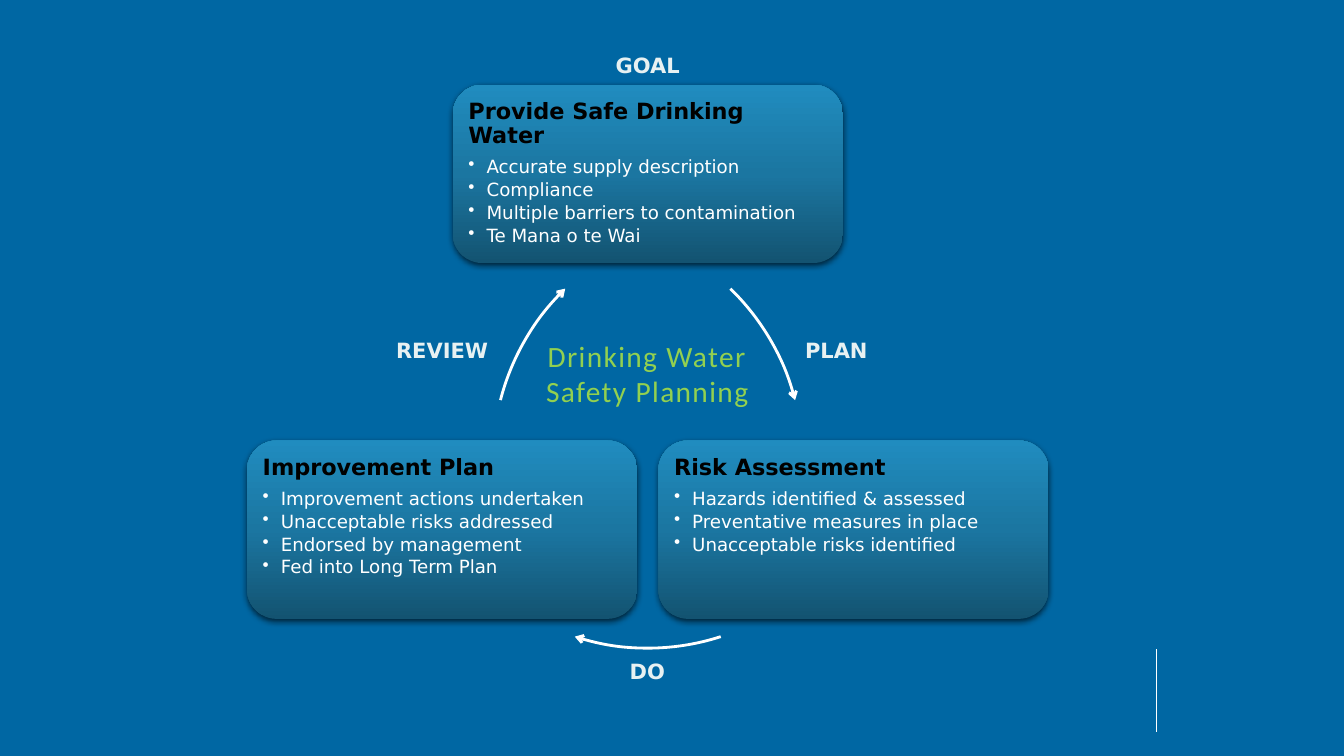
import copy

import lxml.etree
import pptx
import pptx.dml.color
import pptx.enum.shapes
import pptx.enum.text
import pptx.oxml.ns
import pptx.util

Inches = pptx.util.Inches
Pt = pptx.util.Pt
qn = pptx.oxml.ns.qn
ALIGN = pptx.enum.text.PP_ALIGN
ANCHOR = pptx.enum.text.MSO_ANCHOR
FIT = pptx.enum.text.MSO_AUTO_SIZE
SHAPE = pptx.enum.shapes.MSO_SHAPE

COLORS = {
    "background": "0067A3",
    "card_bottom": "135371",
    "card_middle": "1B76A1",
    "card_top": "208CBF",
    "shadow": "000000",
    "heading": "000000",
    "white": "FFFFFF",
    "label": "E7F1F2",
    "title": "92D050",
}


def rgb(name):
    return pptx.dml.color.RGBColor.from_string(COLORS[name])


def add_xml(parent, tag, **attributes):
    return lxml.etree.SubElement(parent, qn(tag), attributes)


class CycleSlide:
    font = "DejaVu Sans"
    card_size = (3.87, 1.77)
    circle = 4.71

    def __init__(self, deck):
        self.slide = deck.slides.add_slide(deck.slide_layouts[5])
        self.shapes = self.slide.shapes
        fill = self.slide.background.fill
        fill.solid()
        fill.fore_color.rgb = rgb("background")

    def run(self, paragraph, text, size, color, bold=False, font=None):
        run = paragraph.add_run()
        run.text = text
        run.font.name = font or self.font
        run.font.size = Pt(size)
        run.font.bold = bold
        run.font.color.rgb = rgb(color)
        return run

    def title(self, text, left, top, width, height):
        title = self.shapes.title
        title.left, title.top = Inches(left), Inches(top)
        title.width, title.height = Inches(width), Inches(height)
        frame = title.text_frame
        frame.word_wrap = True
        frame.auto_size = FIT.NONE
        frame.vertical_anchor = ANCHOR.BOTTOM
        paragraph = frame.paragraphs[0]
        paragraph.alignment = ALIGN.CENTER
        run = self.run(paragraph, text, 21, "title", font="Calibri")
        run.font._element.set("spc", "100")

    def label(self, text, left, top, width):
        label = self.shapes.add_textbox(
            Inches(left), Inches(top), Inches(width), Inches(0.35))
        frame = label.text_frame
        frame.word_wrap = False
        frame.auto_size = FIT.SHAPE_TO_FIT_TEXT
        paragraph = frame.paragraphs[0]
        paragraph.alignment = ALIGN.CENTER
        self.run(paragraph, text, 15, "label", bold=True)

    def card(self, left, top, heading, points):
        width, height = self.card_size
        card = self.shapes.add_shape(
            SHAPE.ROUNDED_RECTANGLE,
            Inches(left), Inches(top), Inches(width), Inches(height))
        card.line.fill.background()
        self.card_fill(card)
        self.card_shadow(card)

        frame = card.text_frame
        frame.word_wrap = True
        frame.vertical_anchor = ANCHOR.TOP
        frame.margin_left = frame.margin_right = Inches(0.07)
        frame.margin_top = frame.margin_bottom = Inches(0.07)
        paragraph = frame.paragraphs[0]
        paragraph.alignment = ALIGN.LEFT
        paragraph.line_spacing = 0.9
        paragraph.space_after = Pt(6.5)
        self.run(paragraph, heading, 16, "heading", bold=True)
        for point in points:
            self.bullet(frame.add_paragraph(), point)

    def card_fill(self, card):
        card.fill.gradient()
        card.fill.gradient_angle = 90
        stops = card._element.spPr.find(".//" + qn("a:gsLst"))
        stops.insert(1, copy.deepcopy(stops[0]))
        names = ("card_bottom", "card_middle", "card_top")
        for index, stop in enumerate(card.fill.gradient_stops):
            stop.position = index / 2
            stop.color.rgb = rgb(names[index])

    def card_shadow(self, card):
        card.shadow.inherit = False
        effects = card._element.spPr.find(qn("a:effectLst"))
        shadow = add_xml(effects, "a:outerShdw", blurRad=str(Pt(4.5)),
                         dist=str(Pt(1.5)), dir="5400000", rotWithShape="0")
        color = add_xml(shadow, "a:srgbClr", val=COLORS["shadow"])
        add_xml(color, "a:alpha", val="63000")

    def bullet(self, paragraph, text):
        paragraph.level = 1
        properties = paragraph._p.get_or_add_pPr()
        properties.set("marL", str(Inches(0.18)))
        properties.set("indent", str(-Inches(0.18)))
        add_xml(properties, "a:buChar", char="•")
        paragraph.alignment = ALIGN.LEFT
        paragraph.line_spacing = 0.9
        paragraph.space_after = Pt(2.3)
        self.run(paragraph, text, 13, "white")

    def curved_arrow(self, left, top, start, end):
        arrow = self.shapes.add_shape(
            SHAPE.ARC, Inches(left), Inches(top),
            Inches(self.circle), Inches(self.circle))
        # Arc angles are clockwise degrees, stored in 60000ths
        arrow.adjustments[0] = start * 0.6
        arrow.adjustments[1] = end * 0.6
        arrow.fill.background()
        arrow.shadow.inherit = False
        arrow.line.color.rgb = rgb("white")
        arrow.line.width = Pt(2)
        add_xml(arrow._element.spPr.find(qn("a:ln")), "a:tailEnd", type="arrow")

    def rule(self, x, top, bottom):
        rule = self.shapes.add_connector(
            pptx.enum.shapes.MSO_CONNECTOR.STRAIGHT,
            Inches(x), Inches(top), Inches(x), Inches(bottom))
        rule.line.color.rgb = rgb("white")
        rule.line.width = Pt(0.5)
        add_xml(rule._element.spPr, "a:effectLst")


def main():
    deck = pptx.Presentation()
    deck.slide_width, deck.slide_height = Inches(13.33), Inches(7.5)
    cycle = CycleSlide(deck)

    # Corner rule
    cycle.rule(11.47, 6.44, 7.26)

    # Cards of the cycle
    cycle.card(4.49, 0.84, "Provide Safe Drinking Water", [
        "Accurate supply description",
        "Compliance",
        "Multiple barriers to contamination",
        "Te Mana o te Wai",
    ])
    cycle.card(6.53, 4.37, "Risk Assessment", [
        "Hazards identified & assessed",
        "Preventative measures in place",
        "Unacceptable risks identified",
    ])
    cycle.card(2.45, 4.37, "Improvement Plan", [
        "Improvement actions undertaken",
        "Unacceptable risks addressed",
        "Endorsed by management",
        "Fed into Long Term Plan",
    ])

    # Arrows between the cards
    for left, top, start, end in [(3.25, 2.2, 314.1, 345.6),
                                  (4.07, 1.72, 72.1, 107.9),
                                  (4.89, 2.2, 194.4, 225.9)]:
        cycle.curved_arrow(left, top, start, end)

    # Centre title and step labels
    cycle.title("Drinking Water Safety Planning", 5.04, 3.3, 2.76, 0.8)
    for step, left, top, width in [("PLAN", 7.88, 3.3, 0.83),
                                   ("GOAL", 6, 0.47, 0.85),
                                   ("DO", 6.14, 6.48, 0.56),
                                   ("REVIEW", 3.8, 3.3, 1.17)]:
        cycle.label(step, left, top, width)

    deck.save("out.pptx")


if __name__ == "__main__":
    main()
